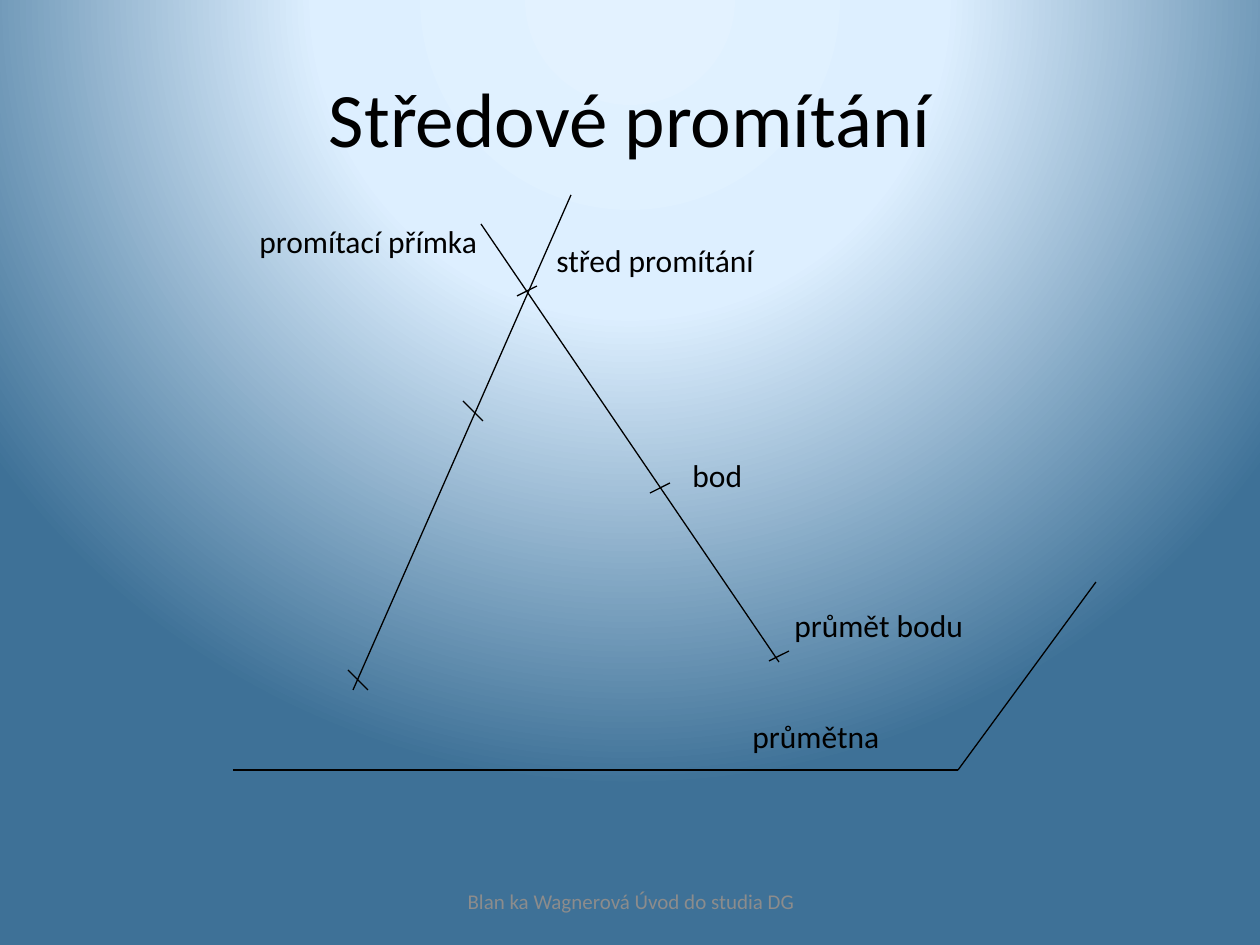
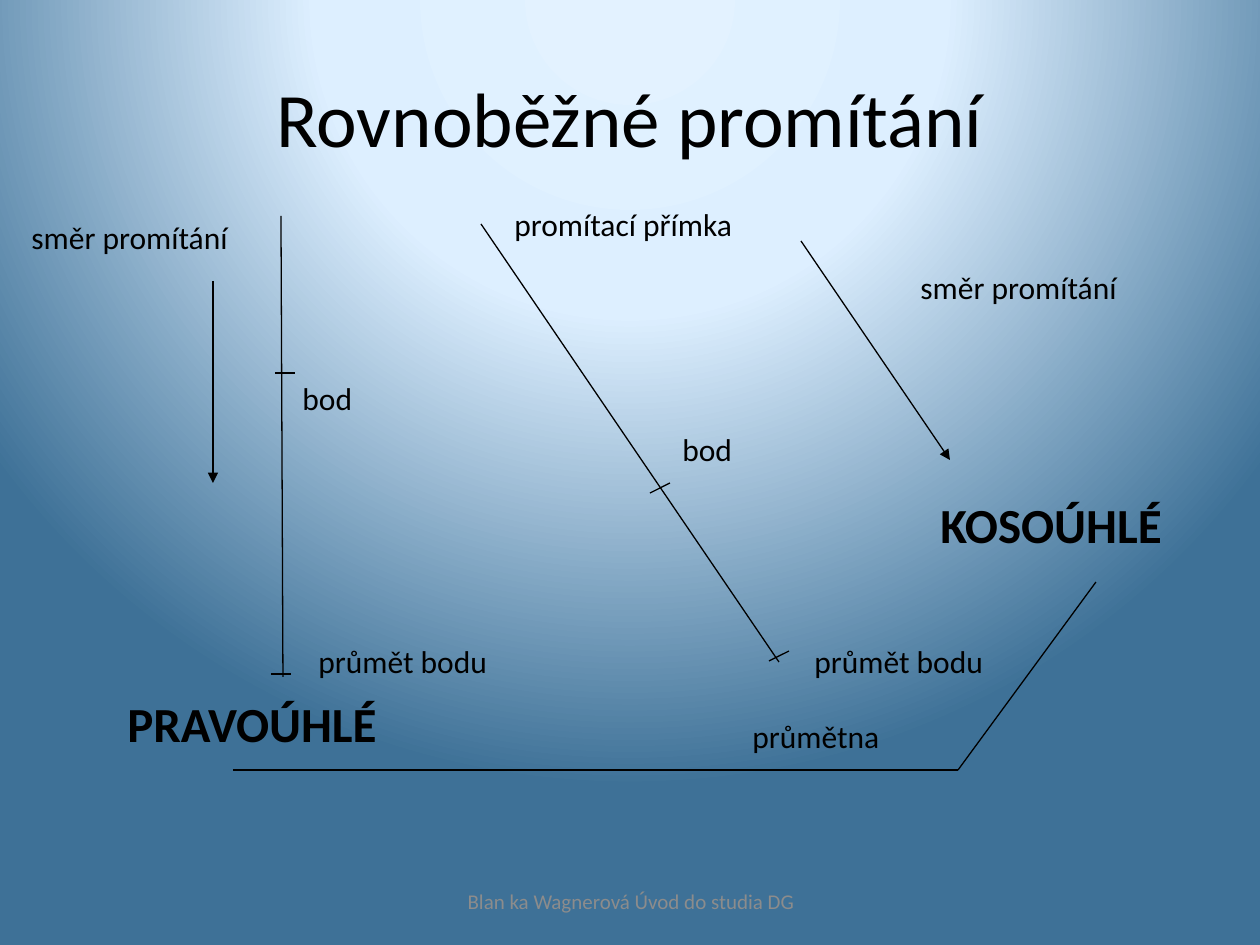
"""Build two slides that compare central and parallel projection."""
from dataclasses import dataclass

from lxml import etree
from pptx import Presentation
from pptx.dml.color import RGBColor
from pptx.enum.shapes import MSO_CONNECTOR
from pptx.enum.text import MSO_ANCHOR, MSO_AUTO_SIZE, PP_ALIGN
from pptx.oxml import parse_xml
from pptx.oxml.ns import nsdecls, qn
from pptx.util import Emu, Pt

STRAIGHT = MSO_CONNECTOR.STRAIGHT
MIDDLE, TOP = MSO_ANCHOR.MIDDLE, MSO_ANCHOR.TOP
CENTER, LEFT = PP_ALIGN.CENTER, PP_ALIGN.LEFT
NO_FIT, GROW = MSO_AUTO_SIZE.NONE, MSO_AUTO_SIZE.SHAPE_TO_FIT_TEXT


@dataclass(frozen=True)
class Theme:
    """Colours, font and sizes shared by the slides."""
    font: str = "Calibri"
    ink: str = "000000"
    footer_ink: str = "8C8C8C"
    gradient: tuple = ((0, "E3F2FF"), (40, "DDEFFF"), (100, "3E7197"))
    title_size: int = 44
    heading_size: int = 28
    label_size: int = 18
    footer_size: int = 12
    line_width: float = 0.75


THEME = Theme()
EMU_PER_PIXEL = 914400 / 126
SLIDE_SIZE = (1260, 945)
TITLE_BOX = (63, 38, 1134, 158)
FOOTER_BOX = (431, 876, 400, 50)
FOOTER = "Blan ka Wagnerová Úvod do studia DG"
LABEL_HEIGHT, HEADING_HEIGHT = 50, 72

TICK_REACH = {"rising": (10, -5), "falling": (10, 10), "flat": (10, 0)}

PLANE_LINES = [(233, 770, 958, 770), (958, 770, 1096, 582)]
OBLIQUE_RAY = (481, 224, 779, 662)
SHARED_LINES = PLANE_LINES + [OBLIQUE_RAY]
SHARED_TICKS = [("rising", 779, 656), ("rising", 660, 488)]
SHARED_LABELS = [("průmětna", 740, 711, 169)]

SLIDES = [
    {
        "title": "Středové promítání",
        "lines": [(571, 195, 353, 690)],
        "arrows": [],
        "ticks": [("rising", 527, 291), ("falling", 473, 411), ("falling", 358, 680)],
        "labels": [
            ("promítací přímka", 247, 216, 280),
            ("střed promítání", 544, 235, 231),
            ("bod", 680, 450, 218),
            ("průmět bodu", 782, 600, 203),
        ],
        "headings": [],
    },
    {
        "title": "Rovnoběžné promítání",
        "lines": [(281, 216, 283, 677)],
        "arrows": [(801, 241, 950, 460), (213, 281, 213, 483)],
        "ticks": [("flat", 285, 373), ("flat", 281, 674)],
        "labels": [
            ("promítací přímka", 502, 199, 280),
            ("směr promítání", 908, 262, 231),
            ("bod", 290, 373, 218),
            ("průmět bodu", 306, 636, 203),
            ("směr promítání", 19, 212, 231),
            ("bod", 670, 424, 132),
            ("průmět bodu", 802, 636, 246),
        ],
        "headings": [("KOSOÚHLÉ", 928, 488, 287), ("PRAVOÚHLÉ", 115, 687, 407)],
    },
]


def px(*lengths):
    return [Emu(round(length * EMU_PER_PIXEL)) for length in lengths]


def set_background(master):
    master.background.fill.solid()
    properties = master.element.find(".//" + qn("p:bgPr"))
    stops = "".join(
        f'<a:gs pos="{position * 1000}"><a:srgbClr val="{color}"/></a:gs>'
        for position, color in THEME.gradient
    )
    gradient = parse_xml(
        f'<a:gradFill {nsdecls("a")} rotWithShape="1"><a:gsLst>{stops}</a:gsLst>'
        '<a:path path="circle"><a:fillToRect l="50000" t="-80000" r="50000" b="180000"/>'
        "</a:path></a:gradFill>"
    )
    properties.replace(properties.find(qn("a:solidFill")), gradient)


def write(shape, text, size, color=THEME.ink, bold=False, align=LEFT, anchor=TOP, fit=GROW):
    frame = shape.text_frame
    frame.word_wrap = True
    frame.auto_size = fit
    frame.vertical_anchor = anchor
    paragraph = frame.paragraphs[0]
    paragraph.alignment = align
    run = paragraph.add_run()
    run.text = text
    run.font.name = THEME.font
    run.font.size = Pt(size)
    run.font.bold = bold
    run.font.color.rgb = RGBColor.from_string(color)


def add_title(slide, text):
    title = slide.shapes.title
    title.left, title.top, title.width, title.height = px(*TITLE_BOX)
    write(title, text, THEME.title_size, align=CENTER, anchor=MIDDLE, fit=NO_FIT)


def add_footer(slide):
    box = slide.shapes.add_textbox(*px(*FOOTER_BOX))
    write(box, FOOTER, THEME.footer_size, THEME.footer_ink,
          align=CENTER, anchor=MIDDLE, fit=NO_FIT)


def add_label(slide, label, height=LABEL_HEIGHT, size=THEME.label_size, bold=False):
    text, left, top, width = label
    box = slide.shapes.add_textbox(*px(left, top, width, height))
    write(box, text, size, bold=bold)


def add_line(slide, ends, arrow=False):
    connector = slide.shapes.add_connector(STRAIGHT, *px(*ends))
    connector.line.width = Pt(THEME.line_width)
    connector.line.color.rgb = RGBColor.from_string(THEME.ink)
    properties = connector.element.spPr
    if arrow:
        outline = properties.find(qn("a:ln"))
        etree.SubElement(outline, qn("a:tailEnd"), type="triangle")
    etree.SubElement(properties, qn("a:effectLst"))


def add_tick(slide, direction, x, y):
    reach_x, reach_y = TICK_REACH[direction]
    add_line(slide, (x - reach_x, y - reach_y, x + reach_x, y + reach_y))


def build_slide(presentation, content):
    slide = presentation.slides.add_slide(presentation.slide_layouts.get_by_name("Title Only"))
    add_title(slide, content["title"])
    add_footer(slide)
    for ends in SHARED_LINES + content["lines"]:
        add_line(slide, ends)
    for ends in content["arrows"]:
        add_line(slide, ends, arrow=True)
    for tick in SHARED_TICKS + content["ticks"]:
        add_tick(slide, *tick)
    for label in SHARED_LABELS + content["labels"]:
        add_label(slide, label)
    for heading in content["headings"]:
        add_label(slide, heading, HEADING_HEIGHT, THEME.heading_size, bold=True)


def main():
    presentation = Presentation()
    presentation.slide_width, presentation.slide_height = px(*SLIDE_SIZE)
    set_background(presentation.slide_master)
    for content in SLIDES:
        build_slide(presentation, content)
    presentation.save("out.pptx")


if __name__ == "__main__":
    main()
